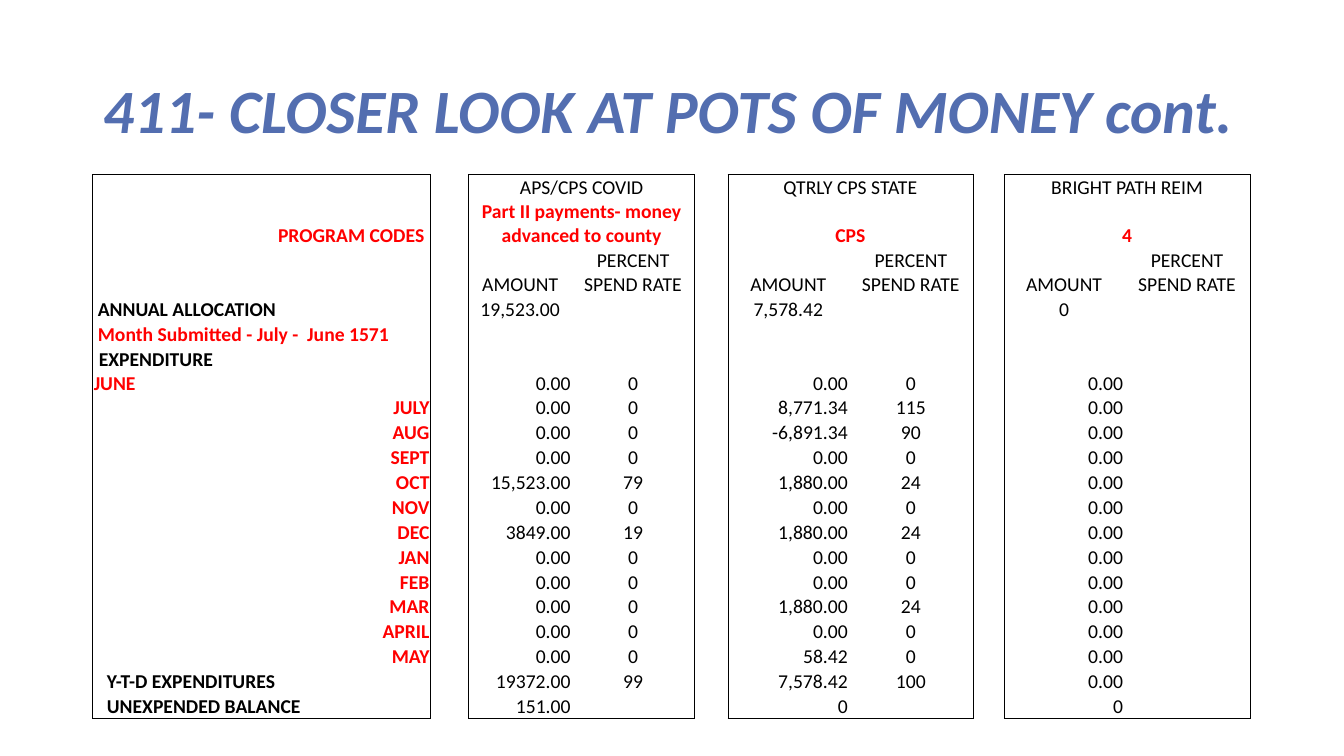
from lxml.etree import SubElement
from pptx import Presentation
from pptx.dml.color import RGBColor
from pptx.enum.text import MSO_ANCHOR, PP_ALIGN
from pptx.oxml.ns import qn
from pptx.util import Inches, Pt

BLACK, RED, BLUE = "000000", "FF0000", "536EB0"
LEFT, CENTER, RIGHT = PP_ALIGN.LEFT, PP_ALIGN.CENTER, PP_ALIGN.RIGHT
NO_STYLE = "{2D5ABB26-0587-4C30-8999-92F81FD0307C}"

COL_WIDTHS = [2.47, 0.88, 0.38, 1.02, 1.22, 0.33, 1.2, 1.23, 0.31, 1.19, 1.25]
ROW_HEIGHTS = [0.23, 0.41, 0.43] + [0.23] * 16
BLOCKS = [0, 3, 6, 9]  # first column of each outlined pair
EDGES = {edge for col in BLOCKS for edge in (col, col + 2)}
LAST_ROW = len(ROW_HEIGHTS) - 1

# label, alignment, colour, margin on the aligned side
LABELS = {
    1: ("PROGRAM CODES", RIGHT, RED, 0.06),
    3: ("ANNUAL ALLOCATION", LEFT, BLACK, 0.05),
    4: ("Month Submitted - July -  June 1571", LEFT, RED, 0.05),
    17: ("Y-T-D EXPENDITURES", LEFT, BLACK, 0.14),
    18: ("UNEXPENDED BALANCE", LEFT, BLACK, 0.14),
}
MONTHS = ["JULY", "AUG", "SEPT", "OCT", "NOV", "DEC", "JAN", "FEB", "MAR", "APRIL", "MAY"]
for i, month in enumerate(MONTHS):
    LABELS[6 + i] = (month, RIGHT, RED, 0.01)

# program, code, annual allocation
PROGRAMS = [
    ("APS/CPS COVID", "Part II payments- money advanced to county", "19,523.00"),
    ("QTRLY CPS STATE", "CPS", "7,578.42"),
    ("BRIGHT PATH REIM", "4", "0"),
]
# amount and percent for each program, from June down to the unexpended balance
SPENDING = [
    ("0.00", "0", "0.00", "0", "0.00", ""),
    ("0.00", "0", "8,771.34", "115", "0.00", ""),
    ("0.00", "0", "-6,891.34", "90", "0.00", ""),
    ("0.00", "0", "0.00", "0", "0.00", ""),
    ("15,523.00", "79", "1,880.00", "24", "0.00", ""),
    ("0.00", "0", "0.00", "0", "0.00", ""),
    ("3849.00", "19", "1,880.00", "24", "0.00", ""),
    ("0.00", "0", "0.00", "0", "0.00", ""),
    ("0.00", "0", "0.00", "0", "0.00", ""),
    ("0.00", "0", "1,880.00", "24", "0.00", ""),
    ("0.00", "0", "0.00", "0", "0.00", ""),
    ("0.00", "0", "58.42", "0", "0.00", ""),
    ("19372.00", "99", "7,578.42", "100", "0.00", ""),
    ("151.00", "", "0", "", "0", ""),
]


def add_run(p, text, color=BLACK, size=14, bold=False, align=CENTER):
    p.alignment = align
    r = p.add_run()
    r.text = text
    r.font.name = "Calibri"
    r.font.size = Pt(size)
    r.font.bold = bold
    r.font.color.rgb = RGBColor.from_string(color)
    return r


def set_border(cell, side, drawn):
    ln = SubElement(cell._tc.get_or_add_tcPr(), qn("a:ln" + side), w=str(Pt(0.5)))
    if drawn:
        fill = SubElement(ln, qn("a:solidFill"))
        SubElement(fill, qn("a:srgbClr"), val=BLACK)
    else:
        SubElement(ln, qn("a:noFill"))


prs = Presentation()
prs.slide_width, prs.slide_height = Inches(13.33), Inches(7.5)
s = prs.slides.add_slide(prs.slide_layouts[5])

title = s.shapes.title
title.left, title.top = Inches(0.92), Inches(0.4)
title.width, title.height = Inches(11.5), Inches(1.45)
tf = title.text_frame
tf.word_wrap = True
tf.vertical_anchor = MSO_ANCHOR.MIDDLE
tf.paragraphs[0].line_spacing = 0.9
r = add_run(tf.paragraphs[0], "411- CLOSER LOOK AT POTS OF MONEY cont.", BLUE, 44, True, LEFT)
r.font.italic = True

frame = s.shapes.add_table(len(ROW_HEIGHTS), len(COL_WIDTHS),
                           Inches(0.92), Inches(1.73), Inches(11.5), Inches(5.08))
table = frame.table
table.first_row = table.horz_banding = False
table._tbl.tblPr.find(qn("a:tableStyleId")).text = NO_STYLE
for col, width in zip(table.columns, COL_WIDTHS):
    col.width = Inches(width)
for row, height in zip(table.rows, ROW_HEIGHTS):
    row.height = Inches(height)

merged = {(row, 0) for row in (1, *range(4, 17), LAST_ROW)}
merged |= {(row, col) for row in (0, 1) for col in BLOCKS[1:]}
for row, col in merged:
    table.cell(row, col).merge(table.cell(row, col + 1))

# Outline each block and clear the cells
for row in range(len(ROW_HEIGHTS)):
    for col in range(len(COL_WIDTHS)):
        cell = table.cell(row, col)
        in_block = col in BLOCKS or col - 1 in BLOCKS
        set_border(cell, "L", col in EDGES)
        set_border(cell, "R", col + 1 in EDGES or (row, col) in merged)
        set_border(cell, "T", in_block and row == 0)
        set_border(cell, "B", in_block and row == LAST_ROW)
        cell.fill.background()
        cell.vertical_anchor = MSO_ANCHOR.BOTTOM
        cell.margin_left = cell.margin_right = cell.margin_top = Inches(0.01)
        cell.margin_bottom = 0

# Row labels
for row, (text, align, color, margin) in LABELS.items():
    cell = table.cell(row, 0)
    if align == LEFT:
        cell.margin_left = Inches(margin)
    else:
        cell.margin_right = Inches(margin)
    add_run(cell.text_frame.paragraphs[0], text, color, bold=True, align=align)

tf = table.cell(5, 0).text_frame
p = tf.paragraphs[0]
add_run(p, "EXPENDITURE", bold=True, align=LEFT)
p._p.get_or_add_pPr().set("marL", str(Inches(0.05)))
add_run(tf.add_paragraph(), "JUNE", RED, bold=True, align=LEFT)

# Program headings and figures
for i, (col, (program, code, allocation)) in enumerate(zip(BLOCKS[1:], PROGRAMS)):
    for row, text in ((0, program), (2, "AMOUNT"), (3, allocation)):
        add_run(table.cell(row, col).text_frame.paragraphs[0], text)
    add_run(table.cell(1, col).text_frame.paragraphs[0], code, RED, bold=True)
    add_run(table.cell(2, col + 1).text_frame.paragraphs[0], "PERCENT SPEND RATE")
    for row, figures in enumerate(SPENDING, start=5):
        amount, percent = figures[2 * i:2 * i + 2]
        add_run(table.cell(row, col).text_frame.paragraphs[0], amount, align=RIGHT)
        if percent:
            add_run(table.cell(row, col + 1).text_frame.paragraphs[0], percent)

# Empty cells take the table's text size so that rows stay low
for cell in table.iter_cells():
    if not cell.text_frame.text:
        SubElement(cell.text_frame.paragraphs[0]._p, qn("a:endParaRPr"), sz="1400")

prs.save("out.pptx")
